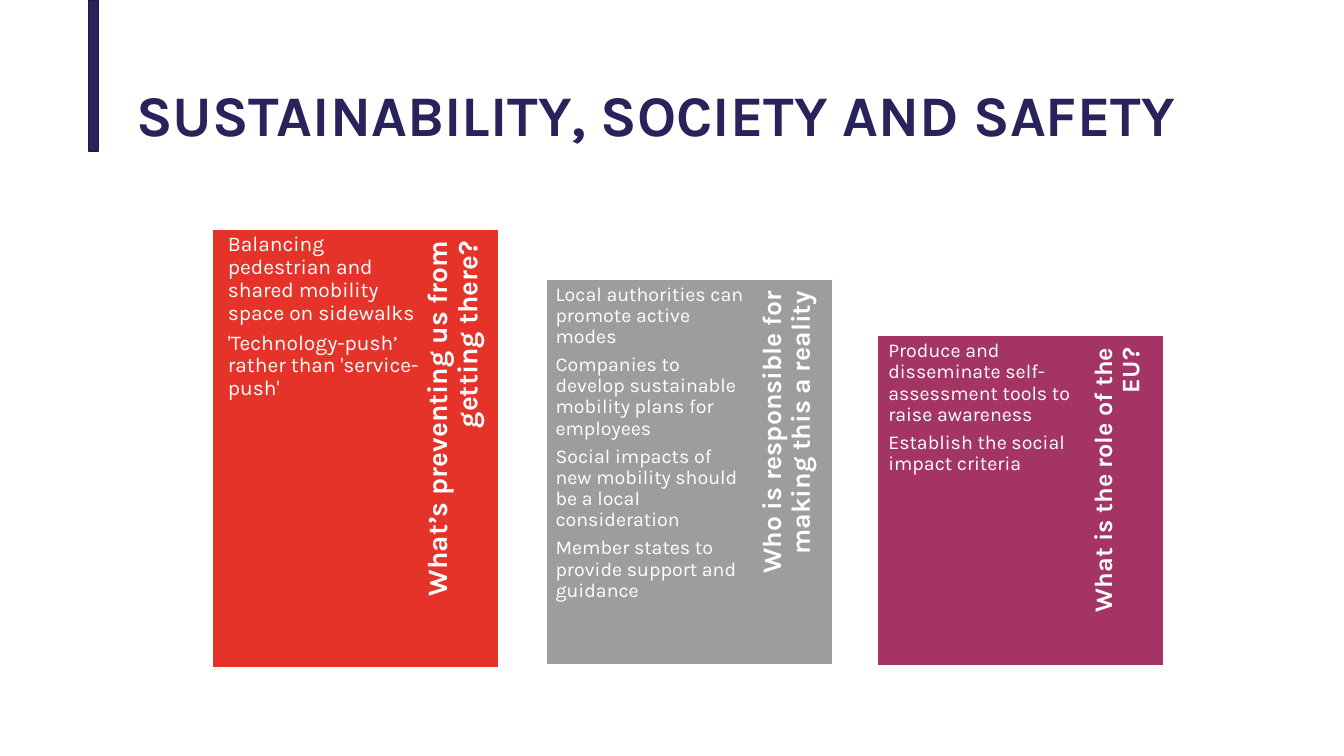
from dataclasses import dataclass

from pptx import Presentation
from pptx import util as u
from pptx.dml.color import RGBColor
from pptx.enum import shapes, text
from pptx.oxml.ns import qn

PX = u.Inches(1) // 100  # one px is a hundredth of an inch


@dataclass(frozen=True)
class Theme:
    font: str = "Karla"
    navy: str = "29235C"
    edge: str = "1E1A44"
    white: str = "FFFFFF"
    red: str = "E6332A"
    grey: str = "9D9D9C"
    plum: str = "A33463"
    title: int = 41


T = Theme()

# box, fill, heading size, list size, list inset and width, heading, items
PANELS = [
    ((211, 227, 284, 435), T.red, 20, 15, 9, 204,
     "What’s preventing us from getting there?",
     ["Balancing pedestrian and shared mobility space on sidewalks",
      "'Technology-push’ rather than 'service-push'"]),
    ((542, 277, 284, 382), T.grey, 19, 14, 3, 202,
     "Who is responsible for making this a reality",
     ["Local authorities can promote active modes",
      "Companies to develop sustainable mobility plans for employees",
      "Social impacts of new mobility should be a local consideration",
      "Member states to provide support and guidance"]),
    ((870, 333, 284, 327), T.plum, 18, 14, 5, 199,
     "What is the role of the EU?",
     ["Produce and disseminate self-assessment tools to raise awareness",
      "Establish the social impact criteria"]),
]


def emu(*box):
    return [round(v * PX) for v in box]


def place(shape, box):
    shape.left, shape.top, shape.width, shape.height = emu(*box)


def frame(shape, insets, anchor):
    tf = shape.text_frame
    tf.word_wrap = True
    tf.auto_size = text.MSO_AUTO_SIZE.NONE
    tf.vertical_anchor = anchor
    (tf.margin_left, tf.margin_top,
     tf.margin_right, tf.margin_bottom) = emu(*insets)
    return tf


def write(par, words, size, color, bold, align, lines=0.9, after=0.35):
    props = par._p.get_or_add_pPr()
    props.set("marL", "0")
    props.set("indent", "0")
    props.append(props.makeelement(qn("a:buNone"), {}))
    par.alignment = align
    par.line_spacing = lines
    par.space_before = u.Pt(0)
    par.space_after = u.Pt(size * after)
    run = par.add_run()
    run.text = words
    font = run.font
    font.name, font.size, font.bold = T.font, u.Pt(size), bold
    font.color.rgb = RGBColor.from_string(color)


def block(slide, box, fill, line):
    rect = slide.shapes.add_shape(shapes.MSO_SHAPE.RECTANGLE, *emu(*box))
    rect.shadow.inherit = False
    rect.fill.solid()
    rect.fill.fore_color.rgb = RGBColor.from_string(fill)
    rect.line.color.rgb = RGBColor.from_string(line)
    rect.line.width = u.Pt(1)


def header(slide, box):
    x, y, w, h = box
    # accent bar hanging from the top edge
    block(slide, (x, y, 10, 150), T.navy, T.edge)
    # title
    head = slide.shapes.title
    place(head, (x + 37, y + 40, w - 37, h - 40))
    tf = frame(head, (10, 5, 10, 5), text.MSO_ANCHOR.MIDDLE)
    write(tf.paragraphs[0], "SUSTAINABILITY, SOCIETY AND SAFETY", T.title,
          T.navy, True, text.PP_ALIGN.LEFT, lines=1, after=0)


def panel(slide, body, box, fill, big, small, inset, wide, label, items):
    x, y, w, h = box
    block(slide, box, fill, T.white)
    # heading turned upwards, hung from the panel's top right
    long, deep = 0.9 * h, 74
    mid = x + w - 7 - deep / 2
    side = slide.shapes.add_textbox(
        *emu(mid - long / 2, y + long / 2 - deep / 2, long, deep))
    side.rotation = 270
    tf = frame(side, (8, 0, 12, 3), text.MSO_ANCHOR.MIDDLE)
    write(tf.paragraphs[0], label, big, T.white, True, text.PP_ALIGN.RIGHT)
    # list, brought in front of the panel
    place(body, (x + inset, y - 1, wide, h + 1))
    body.element.getparent().append(body.element)
    tf = frame(body, (6, 6, 6, 6), text.MSO_ANCHOR.TOP)
    for i, item in enumerate(items):
        par = tf.add_paragraph() if i else tf.paragraphs[0]
        write(par, item, small, T.white, False, text.PP_ALIGN.LEFT)


def main():
    prs = Presentation()
    prs.slide_width, prs.slide_height = emu(1333, 750)
    slide = prs.slides.add_slide(prs.slide_layouts[4])
    header(slide, (88, 0, 1153, 185))
    # three list placeholders are used, the spare one goes
    *bodies, spare = list(slide.placeholders)[1:]
    spare.element.getparent().remove(spare.element)
    for body, data in zip(bodies, PANELS):
        panel(slide, body, *data)
    prs.save("out.pptx")


if __name__ == "__main__":
    main()
